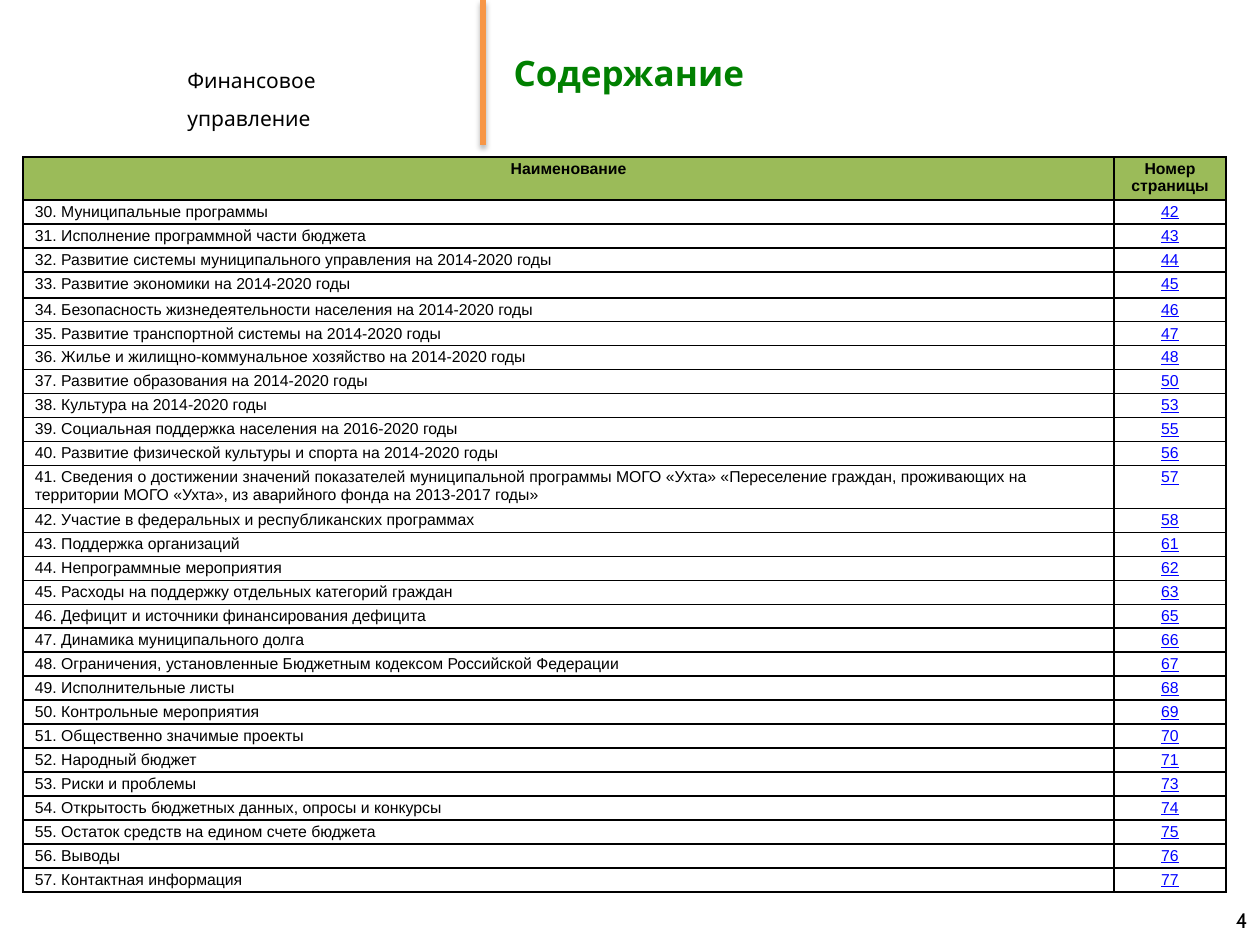
from lxml.etree import SubElement
from pptx import Presentation
from pptx.dml.color import RGBColor
from pptx.enum.shapes import MSO_CONNECTOR
from pptx.enum.text import MSO_ANCHOR as Anchor, MSO_AUTO_SIZE as Fit, PP_ALIGN as Align
from pptx.oxml.ns import qn
from pptx.util import Pt

SCALE = 914400 / 126
BLACK, GREEN, OLIVE = "000000", "008000", "9BBB59"
ORANGE, BLUE = "F79646", "0000FF"

HEAD = ("Наименование", "Номер страницы")
FIRST = 30
TOPICS = [
    ("Муниципальные программы", 42),
    ("Исполнение программной части бюджета", 43),
    ("Развитие системы муниципального управления на 2014-2020 годы", 44),
    ("Развитие экономики на 2014-2020 годы", 45),
    ("Безопасность жизнедеятельности населения на 2014-2020 годы", 46),
    ("Развитие транспортной системы на 2014-2020 годы", 47),
    ("Жилье и жилищно-коммунальное хозяйство на 2014-2020 годы", 48),
    ("Развитие образования на 2014-2020 годы", 50),
    ("Культура на 2014-2020 годы", 53),
    ("Социальная поддержка населения на 2016-2020 годы", 55),
    ("Развитие физической культуры и спорта на 2014-2020 годы", 56),
    ("Сведения о достижении значений показателей муниципальной программы "
     "МОГО «Ухта» «Переселение граждан, проживающих на территории МОГО «Ухта», "
     "из аварийного фонда на 2013-2017 годы»", 57),
    ("Участие в федеральных и республиканских программах", 58),
    ("Поддержка организаций", 61),
    ("Непрограммные мероприятия", 62),
    ("Расходы на поддержку отдельных категорий граждан", 63),
    ("Дефицит и источники финансирования дефицита", 65),
    ("Динамика муниципального долга", 66),
    ("Ограничения, установленные Бюджетным кодексом Российской Федерации", 67),
    ("Исполнительные листы", 68),
    ("Контрольные мероприятия", 69),
    ("Общественно значимые проекты", 70),
    ("Народный бюджет", 71),
    ("Риски и проблемы", 73),
    ("Открытость бюджетных данных, опросы и конкурсы", 74),
    ("Остаток средств на едином счете бюджета", 75),
    ("Выводы", 76),
    ("Контактная информация", 77),
]
PAGE_COL = 112
TALL = {0: 42, 4: 26, 12: 41}  # rows that differ from the even height


def px(n):
    return round(n * SCALE)


def rgb(code):
    return RGBColor.from_string(code)


def write(frame, text, size, color=BLACK, font="Cabin", bold=False, align=Align.LEFT):
    frame.text = text
    frame.word_wrap = True
    par = frame.paragraphs[0]
    par.alignment = align
    face = par.runs[0].font
    face.name, face.size, face.bold = font, Pt(size), bold
    face.color.rgb = rgb(color)
    return par


def add_text(slide, box, text, size, **style):
    shape = slide.shapes.add_textbox(*map(px, box))
    return shape.text_frame, write(shape.text_frame, text, size, **style)


def add_shadow(line):
    effects = SubElement(line._element.spPr, qn("a:effectLst"))
    shadow = SubElement(effects, qn("a:outerShdw"), blurRad=str(Pt(3.1)),
                        dist=str(Pt(1.8)), dir="5400000", rotWithShape="0")
    color = SubElement(shadow, qn("a:srgbClr"), val=BLACK)
    SubElement(color, qn("a:alpha"), val="35000")


def add_header(slide, box):
    x, y, w, h = box
    _, par = add_text(slide, (x + 175, y + 49, 265, 45), "Финансовое управление", 12)
    par.line_spacing = 1.5

    bar = x + 483
    line = slide.shapes.add_connector(MSO_CONNECTOR.STRAIGHT,
                                      px(bar), px(y), px(bar), px(y + h))
    line.line.color.rgb = rgb(ORANGE)
    line.line.width = Pt(3)
    add_shadow(line)

    title = slide.shapes.title
    left = x + 501
    title.left, title.top, title.width, title.height = map(px, (left, y, x + w - left, h))
    write(title.text_frame, "Содержание", 20, color=GREEN, bold=True)
    title.text_frame.vertical_anchor = Anchor.MIDDLE
    title.text_frame.auto_size = Fit.NONE


def add_borders(cell):
    props = cell._tc.get_or_add_tcPr()
    for place, side in enumerate(("lnL", "lnR", "lnT", "lnB")):
        edge = SubElement(props, qn(f"a:{side}"), w=str(Pt(1)))
        fill = SubElement(edge, qn("a:solidFill"))
        SubElement(fill, qn("a:srgbClr"), val=BLACK)
        props.insert(place, edge)


def fill_cell(cell, text, head, page):
    cell.margin_left = cell.margin_right = px(12)
    cell.margin_top, cell.margin_bottom = px(3), px(2)
    link = page and not head
    par = write(cell.text_frame, text, 9, font="Arial", bold=head,
                color=BLUE if link else BLACK,
                align=Align.CENTER if head or page else Align.LEFT)
    par.runs[0].font.underline = link
    if head:
        cell.fill.solid()
        cell.fill.fore_color.rgb = rgb(OLIVE)
    else:
        cell.fill.background()
    add_borders(cell)


def add_contents(slide, box):
    w, h = box[2:]
    rows = [HEAD] + [(f"{num}. {name}", str(page))
                     for num, (name, page) in enumerate(TOPICS, FIRST)]
    table = slide.shapes.add_table(len(rows), 2, *map(px, box)).table
    table.first_row = table.horz_banding = False
    table.columns[0].width = px(w - PAGE_COL)
    table.columns[1].width = px(PAGE_COL)
    even = (h - sum(TALL.values())) / (len(rows) - len(TALL))
    for r, texts in enumerate(rows):
        table.rows[r].height = px(TALL.get(r, even))
        for c, text in enumerate(texts):
            fill_cell(table.cell(r, c), text, head=r == 0, page=c == 1)


def add_number(slide, box):
    frame, _ = add_text(slide, box, "4", 12, align=Align.RIGHT)
    frame.vertical_anchor = Anchor.MIDDLE


def main():
    deck = Presentation()
    deck.slide_width, deck.slide_height = px(1260), px(945)
    slide = deck.slides.add_slide(deck.slide_layouts[5])
    add_header(slide, (0, 0, 1260, 145))
    add_contents(slide, (23, 157, 1203, 725))
    add_number(slide, (966, 895, 294, 50))
    deck.save("out.pptx")


if __name__ == "__main__":
    main()
